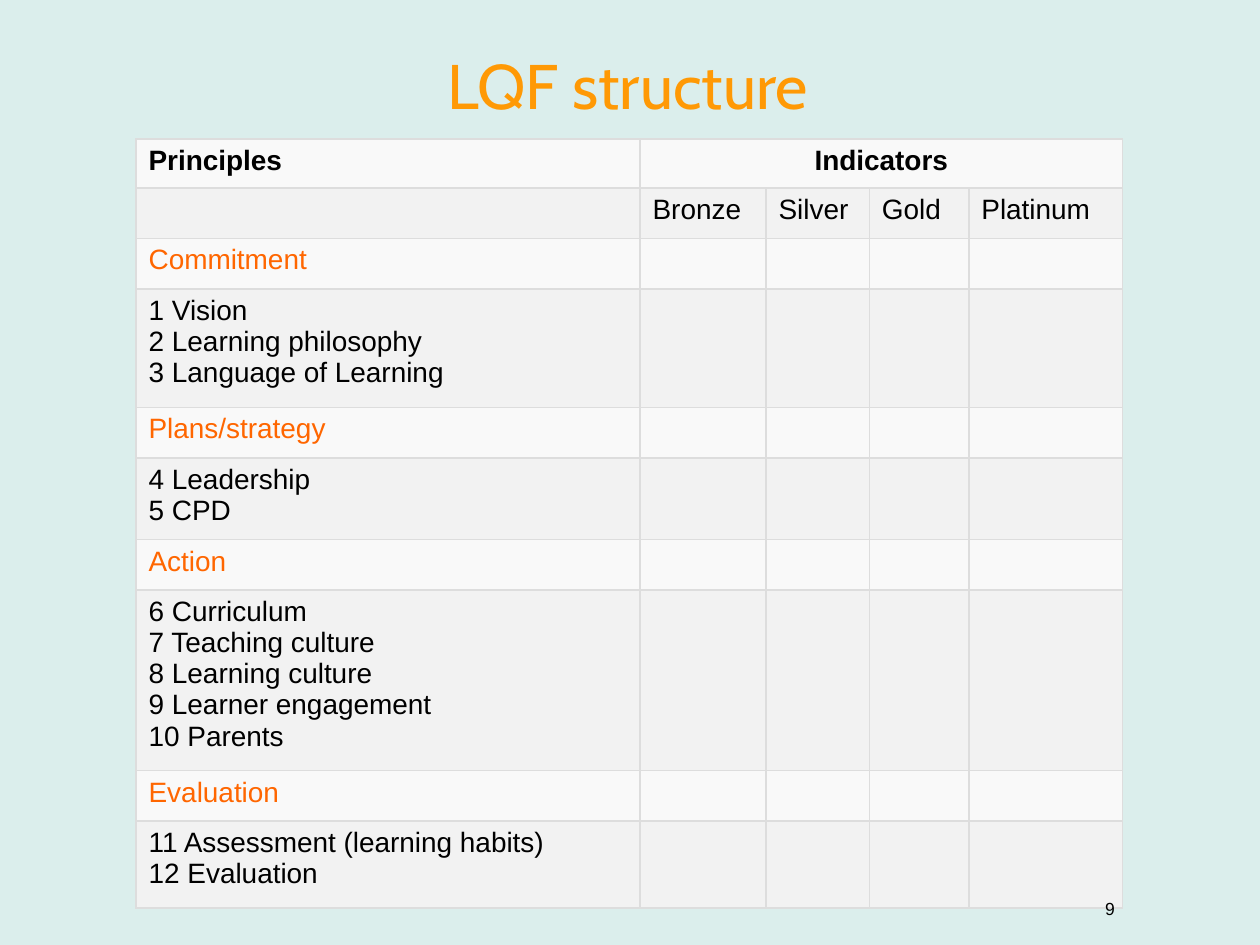
from lxml import etree
from pptx import Presentation
from pptx import util as u
from pptx.dml.color import RGBColor
from pptx.enum import text
from pptx.oxml.ns import qn

WIDTH, HEIGHT = 10, 7.5
COLORS = {
    "background": "DBEEEC", "title": "FF9905", "heading": "FF6600",
    "text": "000000", "odd": "F9F9F9", "even": "F2F2F2", "border": "DDDDDD",
}
COLUMNS = [4, 1, 0.82, 0.79, 1.22]
ROWS = [0.39, 0.39, 0.39, 0.94, 0.39, 0.65, 0.39, 1.43, 0.39, 0.69]
LEVELS = ["Bronze", "Silver", "Gold", "Platinum"]
PRINCIPLES = {
    "Commitment": ["1 Vision", "2 Learning philosophy", "3 Language of Learning"],
    "Plans/strategy": ["4 Leadership", "5 CPD"],
    "Action": ["6 Curriculum", "7 Teaching culture", "8 Learning culture",
               "9 Learner engagement", "10 Parents"],
    "Evaluation": ["11 Assessment (learning habits)", "12 Evaluation"],
}
BODY = {"name": "Arial", "size": u.Pt(16), "bold": False}
HEADER = {**BODY, "bold": True}
TITLE = {"name": "Cabin", "size": u.Pt(36)}
NUMBER = {"name": "Arial", "size": u.Pt(10)}


def rgb(name):
    return RGBColor.from_string(COLORS[name])


def write(frame, lines, format_values, color="text", align=text.PP_ALIGN.LEFT):
    """Fill a text frame with one paragraph per line."""
    for index, line in enumerate(lines):
        paragraph = frame.add_paragraph() if index else frame.paragraphs[0]
        paragraph.alignment = align
        run = paragraph.add_run()
        run.text = line
        for attribute, value in format_values.items():
            setattr(run.font, attribute, value)
        run.font.color.rgb = rgb(color)


def add_label(slide, box, line, format_values, color, margins, wrap):
    """Add a centred text box; box is given as shares of the slide."""
    left, top, width, height = box
    shape = slide.shapes.add_textbox(
        u.Inches(left * WIDTH), u.Inches(top * HEIGHT),
        u.Inches(width * WIDTH), u.Inches(height * HEIGHT))
    frame = shape.text_frame
    frame.word_wrap = wrap
    frame.vertical_anchor = text.MSO_ANCHOR.MIDDLE
    for side, margin in zip(("left", "top", "right", "bottom"), margins):
        setattr(frame, f"margin_{side}", u.Inches(margin))
    write(frame, [line], format_values, color, text.PP_ALIGN.CENTER)


def style_cell(cell, fill):
    """Give a cell thin borders on all sides and a solid fill."""
    properties = cell._tc.get_or_add_tcPr()
    for side in ("lnL", "lnR", "lnT", "lnB"):
        line = etree.SubElement(properties, qn(f"a:{side}"), w=str(u.Pt(1)))
        solid = etree.SubElement(line, qn("a:solidFill"))
        etree.SubElement(solid, qn("a:srgbClr"), val=COLORS["border"])
    cell.fill.solid()
    cell.fill.fore_color.rgb = rgb(fill)


def add_grid(slide, left, top):
    """Add the empty table with alternating row fills."""
    table = slide.shapes.add_table(
        len(ROWS), len(COLUMNS), u.Inches(left * WIDTH), u.Inches(top * HEIGHT),
        u.Inches(sum(COLUMNS)), u.Inches(sum(ROWS))).table
    table.first_row = table.horz_banding = False
    for column, width in zip(table.columns, COLUMNS):
        column.width = u.Inches(width)
    for index, (row, height) in enumerate(zip(table.rows, ROWS)):
        row.height = u.Inches(height)
        for cell in row.cells:
            style_cell(cell, "even" if index % 2 else "odd")
    return table


def fill_table(table):
    # Two header rows
    table.cell(0, 1).merge(table.cell(0, len(LEVELS)))
    write(table.cell(0, 0).text_frame, ["Principles"], HEADER)
    write(table.cell(0, 1).text_frame, ["Indicators"], HEADER,
          align=text.PP_ALIGN.CENTER)
    for column, level in enumerate(LEVELS, 1):
        write(table.cell(1, column).text_frame, [level], BODY)
    # A heading row and a list row for each group
    for group, (heading, items) in enumerate(PRINCIPLES.items(), 1):
        write(table.cell(2 * group, 0).text_frame, [heading], BODY, "heading")
        write(table.cell(2 * group + 1, 0).text_frame, items, BODY)


def main():
    presentation = Presentation()
    presentation.slide_width = u.Inches(WIDTH)
    presentation.slide_height = u.Inches(HEIGHT)
    slide = presentation.slides.add_slide(presentation.slide_layouts[6])
    slide.background.fill.solid()
    slide.background.fill.fore_color.rgb = rgb("background")

    # Title
    add_label(slide, (0.05, 0.023, 0.9, 0.133), "LQF structure", TITLE, "title",
              (0.06, 0.06, 0.1, 0.06), True)
    # Principles and indicators
    fill_table(add_grid(slide, 0.108, 0.147))
    # Slide number
    add_label(slide, (0.867, 0.944, 0.028, 0.035), "9", NUMBER, "text",
              (0.1, 0.05, 0.1, 0.05), False)

    presentation.save("out.pptx")


if __name__ == "__main__":
    main()
